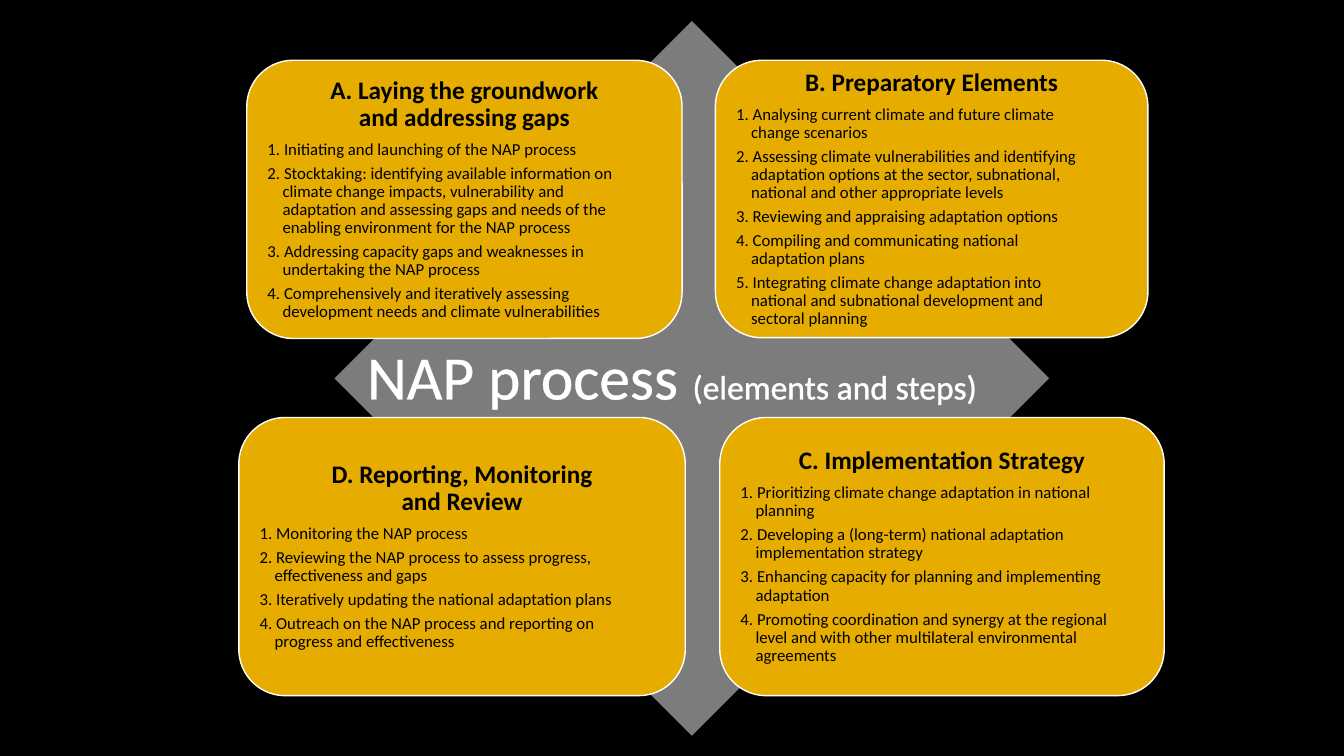
"""Build the slide on the four elements of the NAP process and their steps."""
from lxml import etree
from pptx import Presentation
from pptx import util as u
from pptx.dml.color import RGBColor
from pptx.enum import shapes, text
from pptx.oxml.ns import qn


def paint(target, color):
    target.solid()
    target.fore_color.rgb = RGBColor.from_string(color)


def write(para, wording, size, color, bold=False):
    span = para.add_run()
    span.text = wording
    for name, value in {"name": "Calibri", "size": u.Pt(size), "bold": bold}.items():
        setattr(span.font, name, value)
    paint(span.font.fill, color)
    return span


BLACK, WHITE, GREY, GOLD = "000000", "FFFFFF", "7C7C7C", "E6AD00"
HANGING = u.Cm(0.38)

elements = [
    ((6.02, 10.52, 11.25, 7.01), "D. Reporting, Monitoring\nand Review", [
        "1. Monitoring the NAP process",
        "2. Reviewing the NAP process to assess progress,\neffectiveness and gaps",
        "3. Iteratively updating the national adaptation plans",
        "4. Outreach on the NAP process and reporting on\nprogress and effectiveness",
    ]),
    ((6.22, 1.52, 10.97, 7.01), "A. Laying the groundwork\nand addressing gaps", [
        "1. Initiating and launching of the NAP process",
        "2. Stocktaking: identifying available information on\n"
        "climate change impacts, vulnerability and\n"
        "adaptation and assessing gaps and needs of the\n"
        "enabling environment for the NAP process",
        "3. Addressing capacity gaps and weaknesses in\nundertaking the NAP process",
        "4. Comprehensively and iteratively assessing\n"
        "development needs and climate vulnerabilities",
    ]),
    ((18.14, 10.52, 11.2, 7.01), "C. Implementation Strategy", [
        "1. Prioritizing climate change adaptation in national\nplanning",
        "2. Developing a (long-term) national adaptation\nimplementation strategy",
        "3. Enhancing capacity for planning and implementing\nadaptation",
        "4. Promoting coordination and synergy at the regional\n"
        "level and with other multilateral environmental\nagreements",
    ]),
    ((18.03, 1.52, 10.9, 6.99), "B. Preparatory Elements", [
        "1. Analysing current climate and future climate\nchange scenarios",
        "2. Assessing climate vulnerabilities and identifying\n"
        "adaptation options at the sector, subnational,\n"
        "national and other appropriate levels",
        "3. Reviewing and appraising adaptation options",
        "4. Compiling and communicating national\nadaptation plans",
        "5. Integrating climate change adaptation into\n"
        "national and subnational development and\nsectoral planning",
    ]),
]

deck = Presentation()
deck.slide_width, deck.slide_height = u.Cm(33.87), u.Cm(19.05)
page = deck.slides.add_slide(deck.slide_layouts[5])
paint(page.background.fill, BLACK)

diamond = page.shapes.add_shape(
    shapes.MSO_SHAPE.DIAMOND, u.Cm(8.43), u.Cm(0.53), u.Cm(18.01), u.Cm(18.01))
diamond.shadow.inherit = False
paint(diamond.fill, GREY)
diamond.line.fill.background()

for place, heading, steps in elements:
    box = page.shapes.add_shape(
        shapes.MSO_SHAPE.ROUNDED_RECTANGLE, *[u.Cm(length) for length in place])
    box.shadow.inherit = False
    paint(box.fill, GOLD)
    paint(box.line.fill, WHITE)
    box.line.width = u.Pt(1)
    frame = box.text_frame
    frame.word_wrap = True
    frame.vertical_anchor = text.MSO_ANCHOR.MIDDLE
    for side in ("left", "top", "right", "bottom"):
        setattr(frame, f"margin_{side}", u.Cm(0.18))
    for number, wording in enumerate([heading, *steps]):
        is_heading = number == 0
        para = frame.paragraphs[0] if is_heading else frame.add_paragraph()
        size = 18 if is_heading else 12
        para.alignment = text.PP_ALIGN.CENTER if is_heading else text.PP_ALIGN.LEFT
        para.line_spacing = 0.9
        para.space_after = u.Pt(size * 0.35)
        if not is_heading:
            properties = para._p.get_or_add_pPr()
            properties.set("marL", str(HANGING))
            properties.set("indent", str(-HANGING))
        for index, line in enumerate(wording.split("\n")):
            if index:
                para.add_line_break()
            write(para, line, size, BLACK, is_heading)

title = page.shapes.title
title.element.getparent().append(title.element)
position = {"left": 8.92, "top": 8.38, "width": 16.03, "height": 2.13}
for name, value in position.items():
    setattr(title, name, u.Cm(value))
title.text_frame.word_wrap = False
title.text_frame.auto_size = text.MSO_AUTO_SIZE.SHAPE_TO_FIT_TEXT
para = title.text_frame.paragraphs[0]
para.alignment = text.PP_ALIGN.CENTER
for wording, size in (("NAP process ", 44), ("(elements and steps)", 24)):
    span = write(para, wording, size, WHITE)
    outline = etree.Element(qn("a:ln"), w=str(u.Pt(1.45)))
    fill = etree.SubElement(outline, qn("a:solidFill"))
    etree.SubElement(fill, qn("a:srgbClr"), val=WHITE)
    span.font._element.insert(0, outline)

deck.save("out.pptx")
